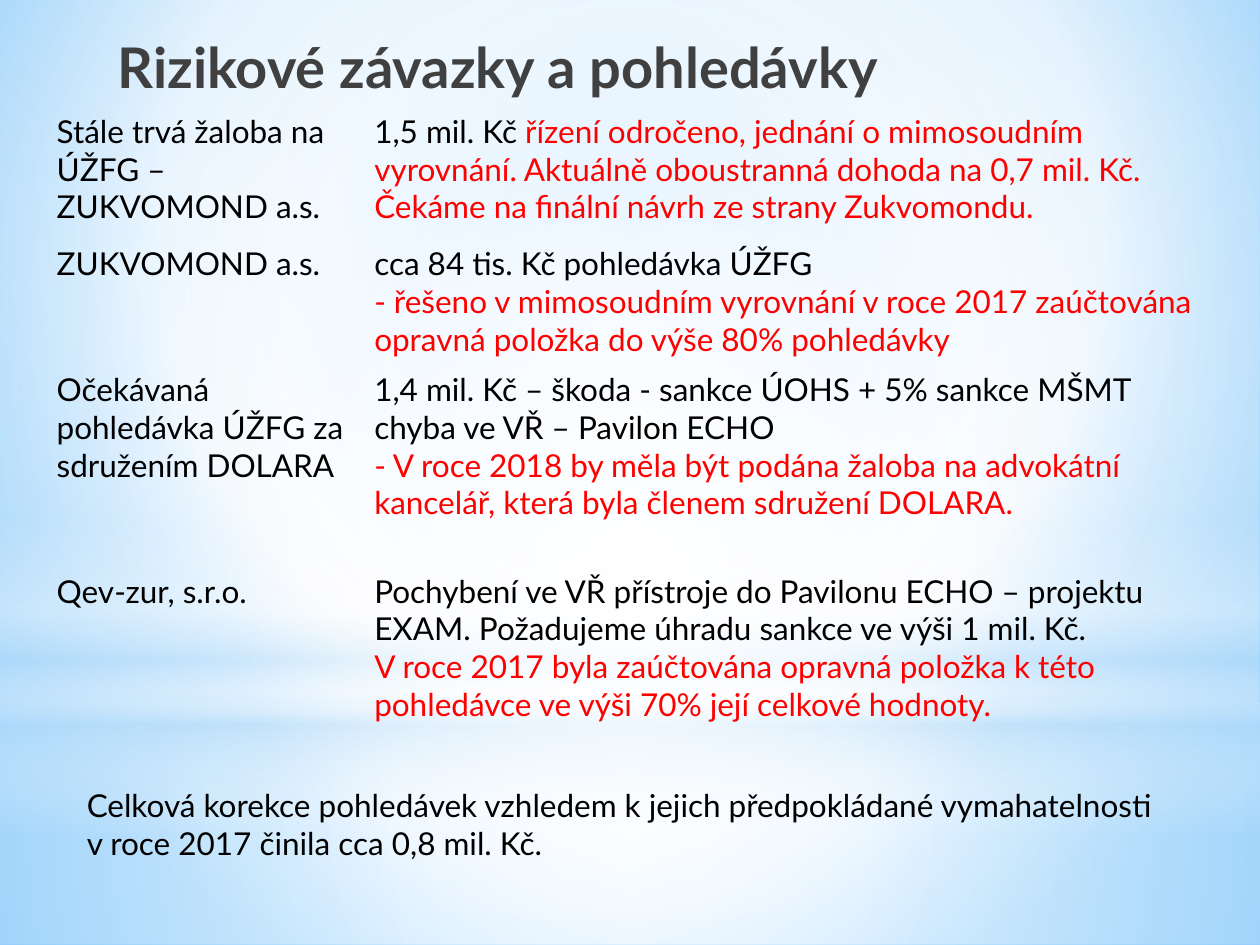
import pptx
import pptx.dml.color
import pptx.enum.shapes
import pptx.enum.text
import pptx.oxml
import pptx.oxml.ns
import pptx.util

Pt = pptx.util.Pt
SHAPE = pptx.enum.shapes.MSO_SHAPE
ANCHOR = pptx.enum.text.MSO_ANCHOR
FONT = "Lato"
BLACK, RED, GREY = "000000", "FF0000", "404040"
WHITE, SKY = "FFFFFF", "B4DCFA"
NO_STYLE = "{2D5ABB26-0587-4C30-8999-92F81FD0307C}"
CENTRE = (50, 50, 50, 50)

ROWS = [
    (75.6, "Stále trvá žaloba na ÚŽFG – ZUKVOMOND a.s.",
     [[("1,5 mil. Kč ", BLACK),
       ("řízení odročeno, jednání o mimosoudním vyrovnání. Aktuálně oboustranná "
        "dohoda na 0,7 mil. Kč. Čekáme na finální návrh ze strany Zukvomondu.", RED)]]),
    (72, "ZUKVOMOND a.s.",
     [[("cca 84 tis. Kč pohledávka ÚŽFG", BLACK)],
      [("- řešeno v mimosoudním vyrovnání v roce 2017 zaúčtována opravná "
        "položka do výše 80% pohledávky", RED)]]),
    (115.2, "Očekávaná pohledávka ÚŽFG za sdružením DOLARA",
     [[("1,4 mil. Kč – škoda - sankce ÚOHS + 5% sankce MŠMT chyba ve VŘ – "
        "Pavilon ECHO", BLACK)],
      [("- V roce 2018 by měla být podána žaloba na advokátní kancelář, která "
        "byla členem sdružení DOLARA.", RED)]]),
    (110.9, "Qev-zur, s.r.o.",
     [[("Pochybení ve VŘ přístroje do Pavilonu ECHO – projektu EXAM. "
        "Požadujeme úhradu sankce ve výši 1 mil. Kč.", BLACK)],
      [("V roce 2017 byla zaúčtována opravná položka k této pohledávce ve výši "
        "70% její celkové hodnoty.", RED)]]),
]


def rgb(value):
    return pptx.dml.color.RGBColor.from_string(value)


def set_gradient(props, stops, focus=None):
    gs = "".join(
        f'<a:gs pos="{pos * 1000}"><a:srgbClr val="{color}">'
        f'<a:alpha val="{alpha * 1000}"/></a:srgbClr></a:gs>'
        for pos, color, alpha in stops)
    if focus:
        l, t, r, b = (v * 1000 for v in focus)
        way = (f'<a:path path="circle"><a:fillToRect l="{l}" t="{t}" '
               f'r="{r}" b="{b}"/></a:path>')
    else:
        way = '<a:lin ang="5400000" scaled="0"/>'
    grad = pptx.oxml.parse_xml(
        f'<a:gradFill {pptx.oxml.ns.nsdecls("a")} rotWithShape="1">'
        f'<a:gsLst>{gs}</a:gsLst>{way}</a:gradFill>')
    solid = props.find(pptx.oxml.ns.qn("a:solidFill"))
    props.replace(solid, grad)


def add_glow(s, kind, box, stops, focus=None):
    sp = s.shapes.add_shape(kind, *map(Pt, box))
    sp.shadow.inherit = False
    sp.line.fill.background()
    sp.fill.solid()
    set_gradient(sp._element.spPr, stops, focus)


def add_backdrop(s, box):
    x, y, w, h = box
    s.background.fill.solid()
    set_gradient(s._element.cSld.bg.bgPr,
                 [(0, "9ED5FF", 100), (60, WHITE, 100), (100, "5BB9FF", 100)],
                 (20, 10, 20, 60))
    split = 401.8
    add_glow(s, SHAPE.RECTANGLE, (x, y + split, w, h - split),
             [(0, WHITE, 91), (37, WHITE, 76), (100, SKY, 79)], CENTRE)
    add_glow(s, SHAPE.RECTANGLE, (x, y, w, split),
             [(0, WHITE, 89), (48, WHITE, 62), (100, SKY, 79)], CENTRE)
    add_glow(s, SHAPE.RECTANGLE, (x, y + 296.6, w, 180),
             [(0, WHITE, 0), (29, WHITE, 30), (45, SKY, 40),
              (55, WHITE, 26), (65, SKY, 60), (100, WHITE, 0)])
    add_glow(s, SHAPE.OVAL, (x, y + 126, w, split),
             [(0, WHITE, 100), (56, WHITE, 0)], CENTRE)


def write(tf, paragraphs, size=18, bold=False):
    for i, runs in enumerate(paragraphs):
        p = tf.add_paragraph() if i else tf.paragraphs[0]
        p.alignment = pptx.enum.text.PP_ALIGN.LEFT
        p.font.name, p.font.size, p.font.bold = FONT, Pt(size), bold
        for text, color in runs:
            r = p.add_run()
            r.text = text
            r.font.color.rgb = rgb(color)


def add_title(s, box, text):
    sp = s.shapes.title
    sp.left, sp.top, sp.width, sp.height = map(Pt, box)
    s.shapes._spTree.append(sp._element)
    sp.text_frame.vertical_anchor = ANCHOR.TOP
    write(sp.text_frame, [[(text, GREY)]], 32, True)


def add_claims(s, box, rows):
    frame = s.shapes.add_table(len(rows), 2, *map(Pt, box))
    table = frame.table
    table.first_row = table.horz_banding = False
    table._tbl.tblPr.find(pptx.oxml.ns.qn("a:tableStyleId")).text = NO_STYLE
    label_width = 181.5
    table.columns[0].width = Pt(label_width)
    table.columns[1].width = Pt(box[2] - label_width)
    for i, (height, label, details) in enumerate(rows):
        table.rows[i].height = Pt(height)
        for j, paragraphs in enumerate(([[(label, BLACK)]], details)):
            cell = table.cell(i, j)
            cell.fill.background()
            write(cell.text_frame, paragraphs)


def add_summary(s, box, text):
    tf = s.shapes.add_textbox(*map(Pt, box)).text_frame
    tf.word_wrap = True
    write(tf, [[(text, BLACK)]])


def main():
    prs = pptx.Presentation()
    prs.slide_width, prs.slide_height = Pt(720), Pt(540)
    s = prs.slides.add_slide(prs.slide_layouts[5])
    add_backdrop(s, (0, 0, 720, 540))
    add_title(s, (60, 15, 513, 90), "Rizikové závazky a pohledávky")
    add_claims(s, (25.2, 60.5, 674.6, 373.7), ROWS)
    add_summary(s, (42.5, 445.7, 635, 51),
                "Celková korekce pohledávek vzhledem k jejich předpokládané "
                "vymahatelnosti v roce 2017 činila cca 0,8 mil. Kč.")
    prs.save("out.pptx")


if __name__ == "__main__":
    main()
